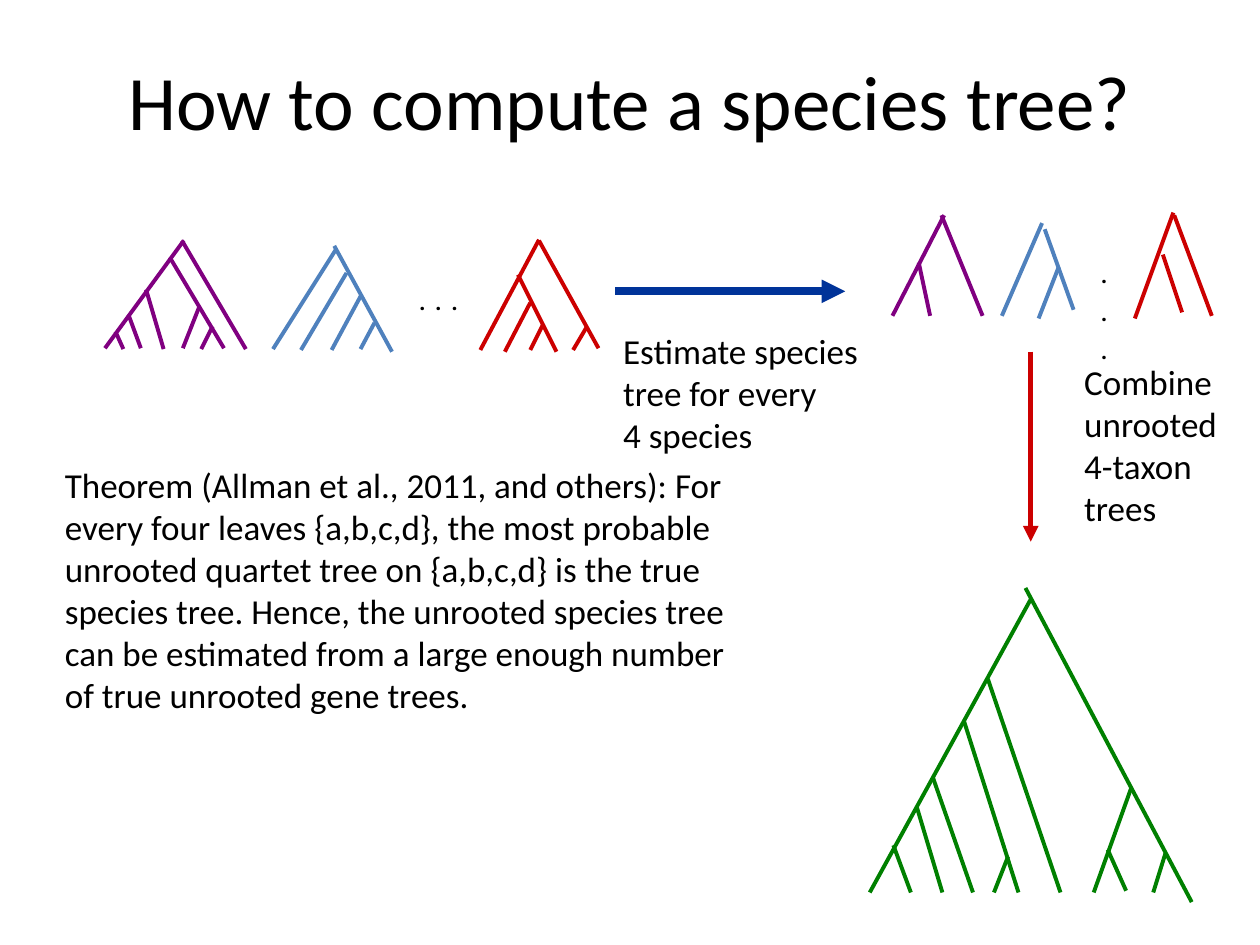
import pptx
import pptx.dml.color
import pptx.enum.shapes
import pptx.enum.text
import pptx.oxml
import pptx.oxml.ns
import pptx.util

PURPLE, BLUE, RED, GREEN = "800080", "4F81BD", "CC0000", "008000"
NAVY, BLACK = "003399", "000000"
BRANCH_WIDTH = 2.25

TITLE = "How to compute a species tree?"

# Each tree: colour, then branches as (x1, y1, x2, y2) in points
GENE_TREES = [
    (PURPLE, [(105, 137.5, 60, 199), (104, 137.5, 140.5, 199.5),
              (97, 147, 128, 199), (83.5, 165.5, 93.5, 199.5),
              (73.5, 180, 80.5, 199), (114, 175, 104.5, 199),
              (121.5, 186.5, 115, 199.5), (70.5, 199.5, 66, 189.5)]),
    (BLUE, [(191, 140.5, 224, 201), (156, 199.5, 192, 142.5),
            (206.5, 168.5, 189.5, 200), (206, 199.5, 214, 184.5),
            (198, 156, 172, 200)]),
    (RED, [(296, 157, 318, 201), (274.5, 200, 308, 137),
           (335.5, 186.5, 327.5, 200), (303, 200, 310.5, 185),
           (308, 137.5, 342, 199), (288.5, 201, 303, 173)]),
]
SPECIES_TREE = (GREEN, [
    (589, 342.5, 497, 510), (586, 336, 681, 515.5),
    (564.5, 388, 606, 510), (625, 510, 646.5, 450),
    (633, 485.5, 643.5, 509), (659, 510, 666, 487.5),
    (551, 412.5, 582, 510), (524, 461.5, 538.5, 510),
    (510.5, 483, 520.5, 510), (533, 444, 556, 510),
    (576, 489.5, 568, 510)])
QUARTET_TREES = [
    (PURPLE, [(539.5, 123, 510, 180.5), (538, 123, 561.5, 180.5),
              (525, 150, 531.5, 180.5)]),
    (BLUE, [(597, 131, 613.5, 177), (572.5, 180.5, 595.5, 127.5),
            (605, 152.5, 593.5, 182)]),
    (RED, [(664.5, 145.5, 675.5, 178.5), (648.5, 182, 670.5, 121.5),
           (671, 123, 692.5, 180.5)]),
]

# Arrows: colour, line width, ends
ARROWS = [
    (NAVY, 4.5, (351.5, 166.5, 483, 166.5)),
    (RED, 3, (589, 201, 589, 309.5)),
]

# Texts: wording, (left, top, width, height), font, size, wrap
TEXTS = [
    (". . .", (232, 156, 39.5, 29), "Roboto", 18, False),
    (". . .", (621.5, 140.5, 26, 27.5), "Roboto", 18, True),
    ("Estimate species\ntree for every\n4 species",
     (349, 184.5, 150.5, 80), "Calibri", 20, False),
    ("Combine\nunrooted\n4-taxon\ntrees",
     (612.5, 202.5, 91.5, 104.5), "Calibri", 20, False),
    ("Theorem (Allman et al., 2011, and others): For every four leaves "
     "{a,b,c,d}, the most probable unrooted quartet tree on {a,b,c,d} is the "
     "true species tree. Hence, the unrooted species tree can be estimated "
     "from a large enough number of true unrooted gene trees.",
     (30, 261.5, 407.5, 152.5), "Calibri", 20, True),
]


def points(values):
    return [pptx.util.Pt(value) for value in values]


def color(hex_string):
    return pptx.dml.color.RGBColor.from_string(hex_string)


def add_line(shapes, ends, line_color, width):
    line = shapes.add_connector(
        pptx.enum.shapes.MSO_CONNECTOR.STRAIGHT, *points(ends))
    line.line.color.rgb = color(line_color)
    line.line.width = pptx.util.Pt(width)
    line._element.spPr.append(pptx.oxml.parse_xml(
        f"<a:effectLst {pptx.oxml.ns.nsdecls('a')}/>"))
    return line


def add_arrow(shapes, ends, line_color, width):
    arrow = add_line(shapes, ends, line_color, width)
    arrow.line._get_or_add_ln().append(pptx.oxml.parse_xml(
        f"<a:tailEnd {pptx.oxml.ns.nsdecls('a')} type='triangle'/>"))


def add_tree(slide, tree_color, branches):
    group = slide.shapes.add_group_shape()
    for ends in branches:
        add_line(group.shapes, ends, tree_color, BRANCH_WIDTH)


def format_runs(text_frame, font_name, size):
    for paragraph in text_frame.paragraphs:
        for run in paragraph.runs:
            run.font.name = font_name
            run.font.size = pptx.util.Pt(size)
            run.font.color.rgb = color(BLACK)


def add_text(slide, text, box, font_name, size, wrap):
    text_frame = slide.shapes.add_textbox(*points(box)).text_frame
    text_frame.word_wrap = wrap
    text_frame.auto_size = pptx.enum.text.MSO_AUTO_SIZE.SHAPE_TO_FIT_TEXT
    text_frame.text = text
    format_runs(text_frame, font_name, size)


def set_title(slide):
    title = slide.shapes.title
    title.left, title.top, title.width, title.height = points((54, 12, 612, 90))
    title.text_frame.text = TITLE
    title.text_frame.vertical_anchor = pptx.enum.text.MSO_ANCHOR.MIDDLE
    title.text_frame.paragraphs[0].alignment = pptx.enum.text.PP_ALIGN.CENTER
    format_runs(title.text_frame, "Calibri", 44)


def main():
    presentation = pptx.Presentation()
    presentation.slide_width, presentation.slide_height = points((720, 540))
    slide = presentation.slides.add_slide(presentation.slide_layouts[5])
    set_title(slide)
    for tree_color, branches in [*GENE_TREES, SPECIES_TREE, *QUARTET_TREES]:
        add_tree(slide, tree_color, branches)
    for arrow_color, width, ends in ARROWS:
        add_arrow(slide.shapes, ends, arrow_color, width)
    for text in TEXTS:
        add_text(slide, *text)
    presentation.save("out.pptx")


if __name__ == "__main__":
    main()
